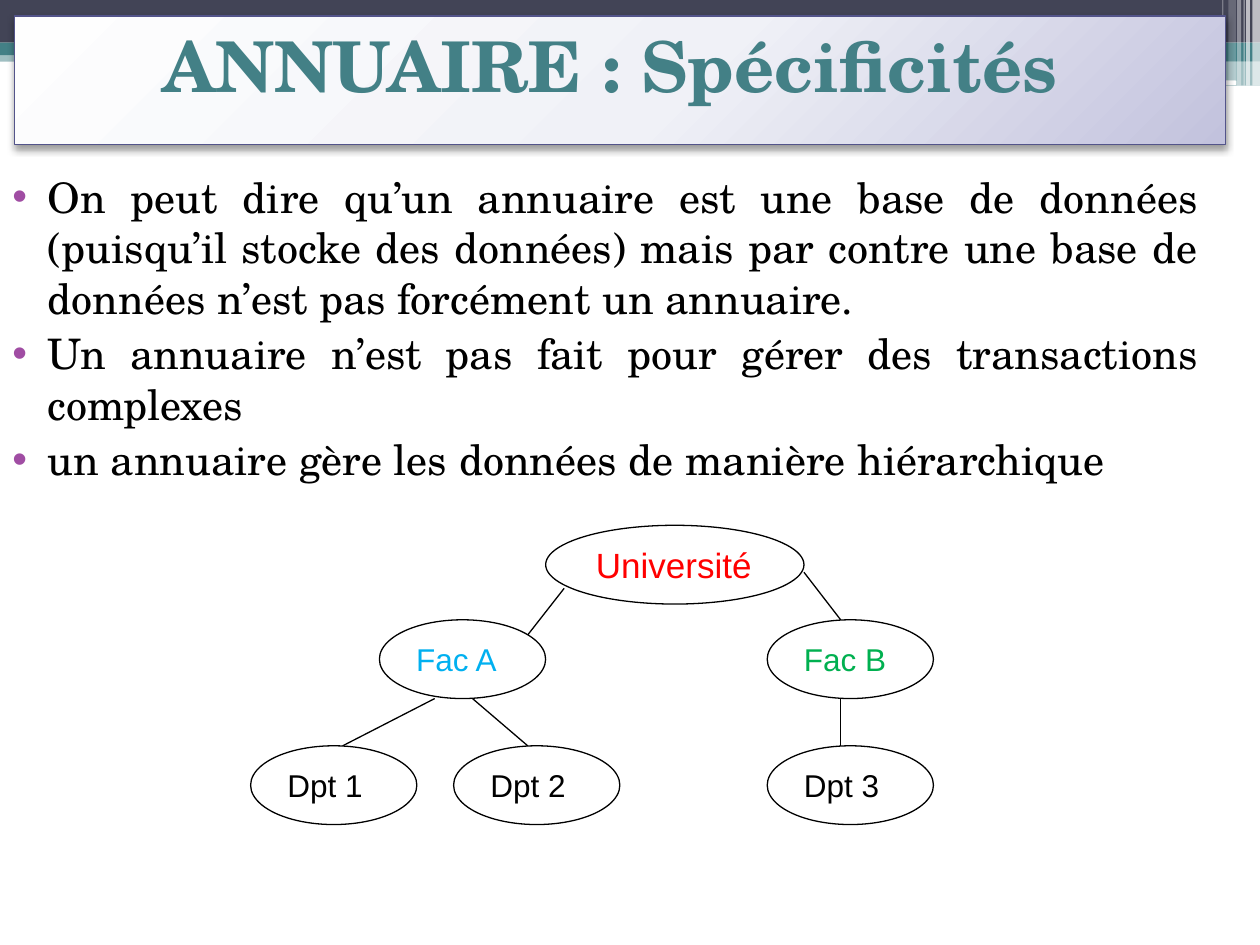
from dataclasses import dataclass

from lxml import etree
from pptx import Presentation
from pptx.dml.color import RGBColor
from pptx.enum.shapes import MSO_CONNECTOR, MSO_SHAPE
from pptx.enum.text import MSO_ANCHOR, PP_ALIGN
from pptx.oxml.ns import qn
from pptx.util import Pt

RECT, ROUNDED, ELLIPSE = MSO_SHAPE.RECTANGLE, MSO_SHAPE.ROUNDED_RECTANGLE, MSO_SHAPE.OVAL
STRAIGHT = MSO_CONNECTOR.STRAIGHT
TOP, MIDDLE = MSO_ANCHOR.TOP, MSO_ANCHOR.MIDDLE
LEFT, CENTER, JUSTIFY = PP_ALIGN.LEFT, PP_ALIGN.CENTER, PP_ALIGN.JUSTIFY


@dataclass(frozen=True)
class Theme:
    serif: str = "TeX Gyre Schola"
    sans: str = "Arial"
    title_size: float = 40
    body_size: float = 24
    root_size: float = 20
    node_size: float = 18
    hairline: float = 0.75
    dark: str = "424456"
    teal: str = "438086"
    white: str = "FFFFFF"
    black: str = "000000"
    bullet: str = "A04DA3"
    title_border: str = "53548A"
    title_stops: tuple = ((0, "FEFEFE"), (55, "F0F1F7"), (100, "C2C2DD"))
    root: str = "FF0000"
    faculty_a: str = "00B0F0"
    faculty_b: str = "00B050"


def add_node(parent, tag, **attributes):
    node = etree.SubElement(parent, qn(tag))
    for name, value in attributes.items():
        node.set(name, str(value))
    return node


def add_color(parent, color, opacity=100):
    node = add_node(parent, "a:srgbClr", val=color)
    if opacity < 100:
        add_node(node, "a:alpha", val=opacity * 1000)


class SlideBuilder:
    def __init__(self, slide, theme):
        self.shapes = slide.shapes
        self.theme = theme

    def shape(self, kind, box, fill, border=None, opacity=100):
        shape = self.shapes.add_shape(kind, *map(Pt, box))
        shape.shadow.inherit = False
        shape.fill.solid()
        shape.fill.fore_color.rgb = RGBColor.from_string(fill)
        if opacity < 100:
            color = shape._element.spPr.find(qn("a:solidFill"))[0]
            add_node(color, "a:alpha", val=opacity * 1000)
        if border:
            shape.line.color.rgb = RGBColor.from_string(border)
            shape.line.width = Pt(self.theme.hairline)
        else:
            shape.line.fill.background()
        return shape

    def text_run(self, paragraph, text, font, size, color, bold=False):
        run = paragraph.add_run()
        run.text = text
        run.font.name = font
        run.font.size = Pt(size)
        run.font.bold = bold
        run.font.color.rgb = RGBColor.from_string(color)

    def title(self, text, box):
        theme = self.theme
        panel = self.shape(RECT, box, theme.white, theme.title_border)
        properties = panel._element.spPr
        gradient = etree.Element(qn("a:gradFill"), rotWithShape="1")
        stops = add_node(gradient, "a:gsLst")
        for position, color in theme.title_stops:
            add_color(add_node(stops, "a:gs", pos=position * 1000), color)
        circle = add_node(gradient, "a:path", path="circle")
        add_node(circle, "a:fillToRect", l=-40000, t=-90000, r=140000, b=190000)
        properties.replace(properties.find(qn("a:solidFill")), gradient)
        shadow = add_node(properties.find(qn("a:effectLst")), "a:outerShdw",
                          blurRad=Pt(4.1), dist=Pt(2), dir=90 * 60000, rotWithShape=0)
        add_color(shadow, theme.black, 40)

        frame = panel.text_frame
        frame.vertical_anchor = TOP
        frame.paragraphs[0].alignment = CENTER
        self.text_run(frame.paragraphs[0], text, theme.serif, theme.title_size, theme.teal, bold=True)

    def bullets(self, texts, box):
        theme = self.theme
        frame = self.shapes.add_textbox(*map(Pt, box)).text_frame
        frame.word_wrap = True
        for index, text in enumerate(texts):
            paragraph = frame.add_paragraph() if index else frame.paragraphs[0]
            paragraph.alignment = JUSTIFY
            paragraph.space_before = Pt(3)
            properties = paragraph._p.get_or_add_pPr()
            properties.set("marL", str(Pt(28.8)))
            properties.set("indent", str(Pt(-20.2)))
            add_color(add_node(properties, "a:buClr"), theme.bullet)
            add_node(properties, "a:buFont", typeface=theme.sans)
            add_node(properties, "a:buChar", char="•")
            self.text_run(paragraph, text, theme.serif, theme.body_size, theme.black)

    def tree_node(self, text, box, size, color):
        theme = self.theme
        frame = self.shape(ELLIPSE, box, theme.white, theme.black).text_frame
        frame.vertical_anchor = MIDDLE
        frame.paragraphs[0].alignment = LEFT
        self.text_run(frame.paragraphs[0], text, theme.sans, size, color)

    def link(self, *ends):
        line = self.shapes.add_connector(STRAIGHT, *map(Pt, ends))
        line.line.color.rgb = RGBColor.from_string(self.theme.black)
        line.line.width = Pt(self.theme.hairline)
        add_node(line._element.spPr, "a:effectLst")


def draw_banner(builder):
    theme = builder.theme
    bands = [
        (RECT, (0, 28.8, 720, 6.5), theme.teal, 50),
        (RECT, (0, 0, 720, 24.4), theme.dark, 100),
        (RECT, (0, 24.4, 720, 7.2), theme.teal, 100),
        (RECT, (426, 28, 294, 7), theme.teal, 100),
        (RECT, (426, 35, 294, 14), theme.teal, 50),
        (ROUNDED, (425.5, 39, 241.2, 2), theme.white, 100),
        (ROUNDED, (580.5, 46, 126, 2.6), theme.white, 100),
    ]
    for kind, box, fill, opacity in bands:
        builder.shape(kind, box, fill, opacity=opacity)
    # left, width, height, opacity
    stripes = [
        (715.7, 4.3, 49, 65), (712.1, 2.2, 49, 65), (710.6, 0.7, 49, 60),
        (707, 2.2, 49, 40), (702, 4.3, 46, 20), (698.4, 0.7, 46, 30),
    ]
    for left, width, height, opacity in stripes:
        builder.shape(RECT, (left, 0, width, height), theme.white, opacity=opacity)


def draw_tree(builder):
    theme = builder.theme
    root_y, faculty_y, department_y = 300.2, 354.2, 426.2
    width, height = 95, 45
    faculty_bottom = faculty_y + height
    builder.tree_node("Université", (311.8, root_y, 147.6, height), theme.root_size, theme.root)
    nodes = [
        ("Fac A", 216.8, faculty_y, theme.faculty_a),
        ("Fac B", 438.4, faculty_y, theme.faculty_b),
        ("Dpt 1", 143.2, department_y, theme.black),
        ("Dpt 2", 259.2, department_y, theme.black),
        ("Dpt 3", 438.4, department_y, theme.black),
    ]
    for name, left, top, color in nodes:
        builder.tree_node(name, (left, top, width, height), theme.node_size, color)
    builder.link(322.4, 336.2, 301.6, 362.8)
    builder.link(459.4, 327, 480.4, faculty_y)
    for start_x, end_x in ((248.4, 195.8), (270, 301.6), (480.4, 480.4)):
        builder.link(start_x, faculty_bottom, end_x, department_y)


def main():
    presentation = Presentation()
    presentation.slide_width, presentation.slide_height = Pt(720), Pt(540)
    slide = presentation.slides.add_slide(presentation.slide_layouts[6])
    builder = SlideBuilder(slide, Theme())
    draw_banner(builder)
    builder.title("ANNUAIRE : Spécificités ", (8.4, 9.2, 692, 73.6))
    builder.bullets([
        "On peut dire qu’un annuaire est une base de données (puisqu’il stocke des données) "
        "mais par contre une base de données n’est pas forcément un annuaire.",
        "Un annuaire n’est pas fait pour gérer des transactions complexes",
        "un annuaire gère les données de manière hiérarchique",
    ], (-8.6, 94.3, 700, 187))
    draw_tree(builder)
    presentation.save("out.pptx")


if __name__ == "__main__":
    main()
